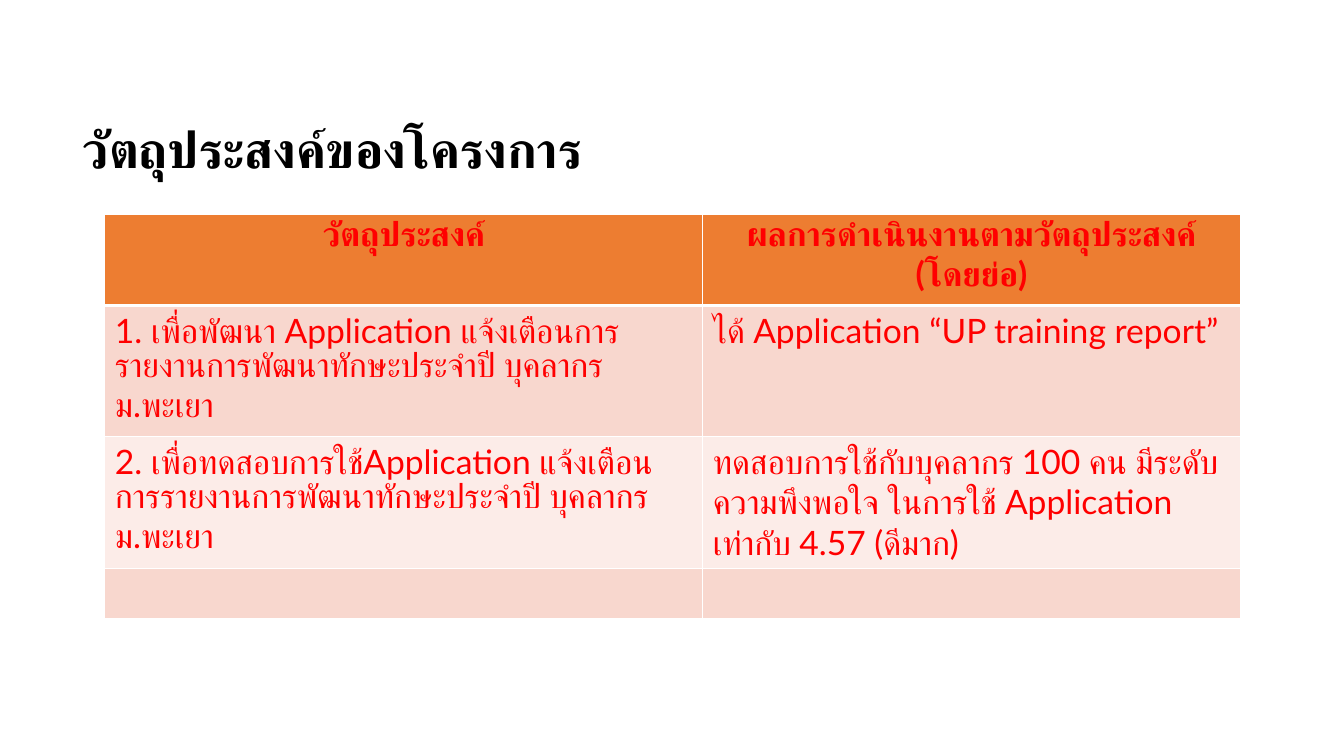
from dataclasses import dataclass

from lxml.etree import SubElement
from pptx import Presentation
from pptx.dml.color import RGBColor
from pptx.enum.text import MSO_ANCHOR, PP_ALIGN
from pptx.oxml.ns import qn
from pptx.util import Inches, Pt


@dataclass(frozen=True)
class Theme:
    font: str = "Lato"
    title_size: int = 36
    table_size: int = 24
    title_color: str = "000000"
    table_color: str = "FF0000"
    header_fill: str = "ED7D31"
    band_fills: tuple = ("F8D7CE", "FCECE8")
    border: str = "FFFFFF"
    border_width: int = 1
    header_rule_width: int = 3


THEME = Theme()

COLUMN_WIDTHS = (5.93, 5.33)
ROW_HEIGHTS = (0.82, 1.23, 1.31, 0.5)
OBJECTIVES = (
    ("วัตถุประสงค์", "ผลการดำเนินงานตามวัตถุประสงค์ (โดยย่อ)"),
    ("1. เพื่อพัฒนา Application แจ้งเตือนการรายงานการพัฒนาทักษะประจำปี บุคลากร ม.พะเยา",
     "ได้ Application “UP training report”"),
    ("2. เพื่อทดสอบการใช้Application แจ้งเตือนการรายงานการพัฒนาทักษะประจำปี บุคลากร ม.พะเยา",
     "ทดสอบการใช้กับบุคลากร 100 คน มีระดับความพึงพอใจ ในการใช้ Application เท่ากับ 4.57 (ดีมาก)"),
    ("", ""),
)


def style_font(font, size, color, bold):
    font.name = THEME.font
    font.size = Pt(size)
    font.bold = bold
    font.color.rgb = RGBColor.from_string(color)


def add_title(slide, wording):
    title = slide.shapes.add_textbox(Inches(0.72), Inches(0.78), Inches(11.5), Inches(1.45))
    frame = title.text_frame
    frame.word_wrap = True
    frame.vertical_anchor = MSO_ANCHOR.MIDDLE
    paragraph = frame.paragraphs[0]
    paragraph.line_spacing = 0.9
    run = paragraph.add_run()
    run.text = wording
    style_font(run.font, THEME.title_size, THEME.title_color, True)


def set_borders(cell, top_width, bottom_width):
    properties = cell._tc.get_or_add_tcPr()
    widths = {"a:lnL": THEME.border_width, "a:lnR": THEME.border_width,
              "a:lnT": top_width, "a:lnB": bottom_width}
    for side, width in widths.items():
        line = SubElement(properties, qn(side), w=str(Pt(width)))
        fill = SubElement(line, qn("a:solidFill"))
        SubElement(fill, qn("a:srgbClr"), val=THEME.border)


def fill_cell(cell, wording, row_index):
    is_header = row_index == 0
    set_borders(
        cell,
        THEME.header_rule_width if row_index == 1 else THEME.border_width,
        THEME.header_rule_width if is_header else THEME.border_width,
    )
    band = THEME.band_fills[(row_index - 1) % len(THEME.band_fills)]
    cell.fill.solid()
    cell.fill.fore_color.rgb = RGBColor.from_string(THEME.header_fill if is_header else band)
    paragraph = cell.text_frame.paragraphs[0]
    paragraph.alignment = PP_ALIGN.CENTER if is_header else PP_ALIGN.LEFT
    if wording:
        run = paragraph.add_run()
        run.text = wording
        style_font(run.font, THEME.table_size, THEME.table_color, is_header)
    else:
        SubElement(paragraph._p, qn("a:endParaRPr"), sz=str(THEME.table_size * 100))


def add_objectives_table(slide):
    table = slide.shapes.add_table(
        len(ROW_HEIGHTS), len(COLUMN_WIDTHS), Inches(1.04), Inches(2.13),
        Inches(sum(COLUMN_WIDTHS)), Inches(sum(ROW_HEIGHTS)),
    ).table
    for column, width in zip(table.columns, COLUMN_WIDTHS):
        column.width = Inches(width)
    for row_index, (row, height) in enumerate(zip(table.rows, ROW_HEIGHTS)):
        row.height = Inches(height)
        for cell, wording in zip(row.cells, OBJECTIVES[row_index]):
            fill_cell(cell, wording, row_index)


def main():
    presentation = Presentation()
    presentation.slide_width = Inches(13.33)
    presentation.slide_height = Inches(7.5)
    slide = presentation.slides.add_slide(presentation.slide_layouts[6])
    add_title(slide, "วัตถุประสงค์ของโครงการ")
    add_objectives_table(slide)
    presentation.save("out.pptx")


if __name__ == "__main__":
    main()
